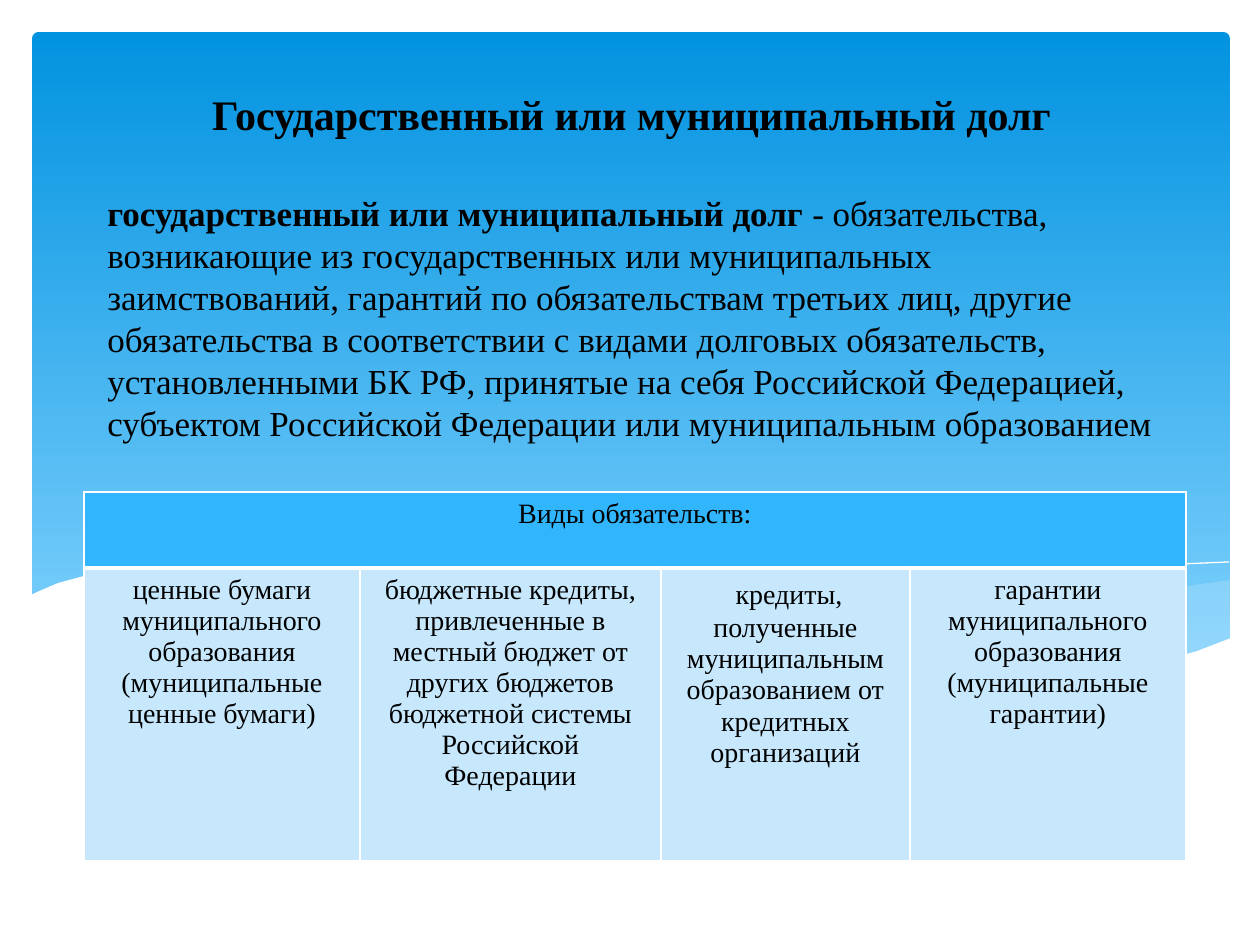
from dataclasses import dataclass
from typing import Optional

from lxml.etree import SubElement
from pptx import Presentation
from pptx.dml.color import RGBColor
from pptx.enum.shapes import MSO_SHAPE
from pptx.enum.text import MSO_ANCHOR, PP_ALIGN
from pptx.oxml.ns import qn
from pptx.util import Emu, Pt

PX = 914400 / 126
SERIF = "Times New Roman"
BLACK = RGBColor(0x00, 0x00, 0x00)
WHITE = RGBColor(0xFF, 0xFF, 0xFF)
DEEP_BLUE = RGBColor(0x02, 0x93, 0xE0)
SKY_BLUE = RGBColor(0x83, 0xD3, 0xFE)
HEADER_BLUE = RGBColor(0x31, 0xB6, 0xFD)
PALE_BLUE = RGBColor(0xC6, 0xE7, 0xFC)


@dataclass(frozen=True)
class Wave:
    points: tuple
    fill: Optional[RGBColor] = None  # without a fill it is an open line
    opacity: int = 100


@dataclass(frozen=True)
class Span:
    text: str
    size: int
    bold: bool = False
    font: str = SERIF
    color: RGBColor = BLACK


WAVES = (
    # Right swell
    Wave(((1230, 580), (1194, 585), (1142, 596), (1085, 609), (1014, 626),
          (949, 640), (890, 653), (833, 662), (888, 669), (954, 675),
          (1026, 678), (1087, 674), (1140, 667), (1187, 654), (1230, 639)),
         PALE_BLUE, 29),
    # Middle swell
    Wave(((1125, 672), (1055, 662), (977, 648), (890, 630), (793, 607),
          (717, 590), (648, 577), (586, 568), (529, 563), (455, 562),
          (394, 564), (360, 570), (431, 578), (509, 593), (566, 607),
          (668, 631), (757, 649), (838, 663), (910, 673), (989, 678),
          (1056, 678)),
         PALE_BLUE, 40),
    # Falling and rising lines
    Wave(((389, 575), (422, 568), (471, 564), (546, 563), (616, 567),
          (701, 576), (801, 590), (916, 612), (1047, 644), (1143, 670))),
    Wave(((772, 651), (847, 631), (942, 609), (1053, 585), (1128, 572),
          (1182, 564), (1229, 562))),
    # White foreground
    Wave(((1231, 638), (1197, 651), (1159, 662), (1103, 672), (1037, 677),
          (980, 675), (915, 670), (842, 662), (760, 648), (667, 629),
          (563, 605), (493, 588), (428, 577), (368, 568), (290, 561),
          (223, 559), (166, 562), (120, 568), (84, 576), (58, 583),
          (37, 592), (29, 596), (29, 742), (1231, 742)),
         WHITE),
)

HEADING = Span("Государственный или муниципальный долг", 24, True)
DEFINITION = (
    Span("государственный или муниципальный долг ", 20, True),
    Span("- обязательства, возникающие из государственных или муниципальных "
         "заимствований, гарантий по обязательствам третьих лиц, другие "
         "обязательства в соответствии с видами долговых обязательств, "
         "установленными БК РФ, принятые на себя Российской Федерацией, "
         "субъектом Российской Федерации или муниципальным образованием", 20),
)
TABLE_TITLE = Span("Виды обязательств:", 16)
OBLIGATIONS = (
    (Span("ценные бумаги муниципального образования "
          "(муниципальные ценные бумаги)", 16),),
    (Span("бюджетные кредиты, привлеченные в местный бюджет от других "
          "бюджетов бюджетной системы Российской Федерации", 16),),
    (Span(" ", 18, font="Calibri", color=WHITE),
     Span("кредиты, полученные муниципальным образованием "
          "от кредитных организаций", 16)),
    (Span("гарантии муниципального образования "
          "(муниципальные гарантии)", 16),),
)
COLUMN_WIDTHS = (276, 301, 249, 276)
ROW_HEIGHTS = (76, 293)


def px(*values: int) -> list:
    return [Emu(round(value * PX)) for value in values]


def add_spans(para, spans: tuple) -> None:
    for span in spans:
        run = para.add_run()
        run.text = span.text
        run.font.name = span.font
        run.font.size = Pt(span.size)
        run.font.bold = span.bold
        run.font.color.rgb = span.color


def add_backdrop(page) -> None:
    panel = page.shapes.add_shape(MSO_SHAPE.ROUNDED_RECTANGLE,
                                  *px(32, 32, 1198, 653))
    panel.adjustments[0] = 0.01
    panel.shadow.inherit = False
    panel.line.fill.background()
    panel.fill.gradient()
    panel.fill.gradient_angle = 270
    for stop, color in zip(panel.fill.gradient_stops, (DEEP_BLUE, SKY_BLUE)):
        stop.color.rgb = color


def add_wave(page, wave: Wave) -> None:
    filled = wave.fill is not None
    builder = page.shapes.build_freeform(*wave.points[0], scale=PX)
    builder.add_line_segments(wave.points[1:], close=filled)
    shape = builder.convert_to_shape()
    shape.shadow.inherit = False
    if not filled:
        shape.fill.background()
        shape.line.color.rgb = WHITE
        shape.line.width = Pt(0)
        return
    shape.line.fill.background()
    shape.fill.solid()
    shape.fill.fore_color.rgb = wave.fill
    if wave.opacity < 100:
        color = shape.element.spPr.find(qn("a:solidFill"))[0]
        SubElement(color, qn("a:alpha"), val=str(wave.opacity * 1000))


def add_text(page, frame: tuple, spans: tuple, anchor: MSO_ANCHOR):
    box = page.shapes.add_textbox(*px(*frame))
    box.text_frame.word_wrap = True
    box.text_frame.vertical_anchor = anchor
    para = box.text_frame.paragraphs[0]
    add_spans(para, spans)
    return para


def set_border(cell, side: str, width: int) -> None:
    line = SubElement(cell._tc.get_or_add_tcPr(), qn(f"a:ln{side}"),
                      w=str(Pt(width)))
    fill = SubElement(line, qn("a:solidFill"))
    SubElement(fill, qn("a:srgbClr"), val=str(WHITE))


def style_cell(cell, fill: RGBColor, top: int, bottom: int) -> None:
    for side, width in (("L", 1), ("R", 1), ("T", top), ("B", bottom)):
        set_border(cell, side, width)
    cell.fill.solid()
    cell.fill.fore_color.rgb = fill


def fill_cell(cell, spans: tuple) -> None:
    para = cell.text_frame.paragraphs[0]
    para.alignment = PP_ALIGN.CENTER
    add_spans(para, spans)


def add_obligations(page) -> None:
    frame = px(84, 492, sum(COLUMN_WIDTHS), sum(ROW_HEIGHTS))
    table = page.shapes.add_table(2, len(COLUMN_WIDTHS), *frame).table
    table.first_row = table.horz_banding = False
    for row, height in zip(table.rows, px(*ROW_HEIGHTS)):
        row.height = height
    for index, width in enumerate(px(*COLUMN_WIDTHS)):
        table.columns[index].width = width
        style_cell(table.cell(0, index), HEADER_BLUE, 1, 3)
        style_cell(table.cell(1, index), PALE_BLUE, 3, 1)
        fill_cell(table.cell(1, index), OBLIGATIONS[index])
    table.cell(0, 0).merge(table.cell(0, len(COLUMN_WIDTHS) - 1))
    fill_cell(table.cell(0, 0), (TABLE_TITLE,))


def main() -> None:
    deck = Presentation()
    deck.slide_width, deck.slide_height = px(1260, 945)
    page = deck.slides.add_slide(deck.slide_layouts[6])

    # Background
    add_backdrop(page)
    for wave in WAVES:
        add_wave(page, wave)

    # Definition and heading
    definition = add_text(page, (95, 185, 1071, 745), DEFINITION, MSO_ANCHOR.TOP)
    definition.line_spacing = Pt(24)
    heading = add_text(page, (189, 86, 885, 59), (HEADING,), MSO_ANCHOR.BOTTOM)
    heading.alignment = PP_ALIGN.CENTER

    # Kinds of obligations
    add_obligations(page)
    deck.save("out.pptx")


if __name__ == "__main__":
    main()
